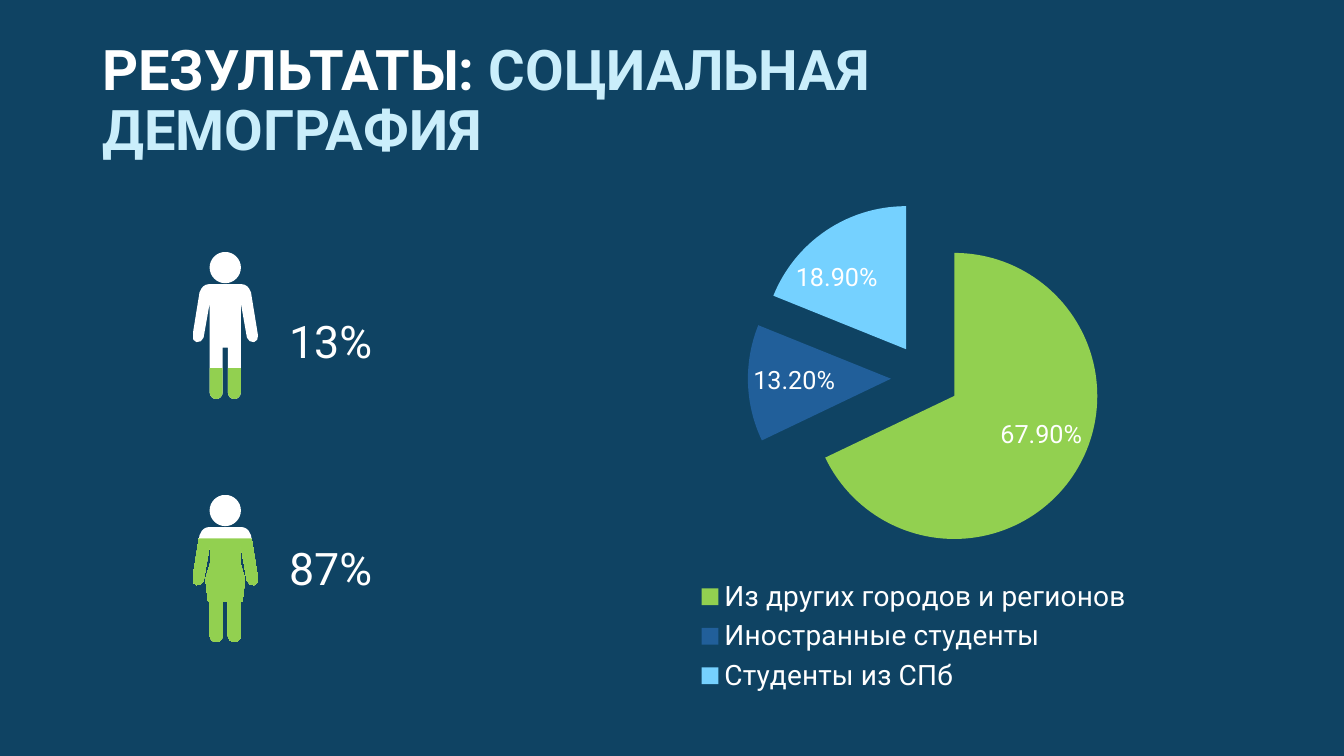
"""Build the slide on the social demography of the respondents."""
import dataclasses

import lxml.etree
import pptx
import pptx.chart.data
import pptx.dml.color
import pptx.enum.chart
import pptx.enum.text
import pptx.oxml.ns
import pptx.util


@dataclasses.dataclass(frozen=True)
class Theme:
    font: str = "Roboto"
    background: str = "0F4363"
    white: str = "FFFFFF"
    black: str = "000000"
    accent: str = "CAEEFB"
    green: str = "92D050"
    blue: str = "215F9A"
    sky: str = "75D1FF"
    title_size: int = 40
    figure_size: int = 32
    legend_size: int = 20
    label_size: int = 18
    chart_size: int = 10


UNIT = 0.72
ARM = [
    [(16.5, 32)],
    [(20, 32), (23.5, 35), (24.5, 38)],
    [(25.5, 40)],
    [(32.5, 83)],
    [(32.5, 86), (31.5, 89), (28.5, 89.5)],
    [(25.5, 90), (22.5, 88), (21.5, 85)],
    [(15.5, 51)],
]
FOOT = [
    [(15.5, 139)],
    [(15.5, 143), (12.5, 146), (9, 146)],
    [(5.5, 146), (2.5, 143), (2.5, 139)],
]
MAN = ARM + FOOT + [[(2.5, 95)]]
DRESS = [[(15, 51)], [(15, 68)], [(19.5, 83)], [(19, 90), (18, 98), (17, 106)], [(15.5, 106)]]
WOMAN = ARM + DRESS + FOOT + [[(2.5, 106)]]
HEAD = [
    [(0, 0)],
    [(8.5, 0), (15.5, 7), (15.5, 15.5)],
    [(15.5, 24), (8.5, 31), (0, 31)],
]


def mirror(half):
    """Return the points of a symmetric outline and the point count of each segment."""
    points = [point for segment in half for point in segment]
    sizes = [len(segment) for segment in half[1:]]
    reflected = [(-x, y) for x, y in reversed(points)]
    if reflected[0] == points[-1]:
        return points + reflected[1:], sizes + sizes[::-1]
    return points + reflected, sizes + [1] + sizes[::-1]


class SlideBuilder:
    """Hold the theme and the current slide."""

    def __init__(self, presentation, theme):
        self.theme = theme
        self.slide = presentation.slides.add_slide(presentation.slide_layouts[5])
        fill = self.slide.background.fill
        fill.solid()
        fill.fore_color.rgb = self.color(theme.background)

    def color(self, value):
        """Return a colour object for a hexadecimal value."""
        return pptx.dml.color.RGBColor.from_string(value)

    def style(self, font, size, color, bold=False):
        """Format a font."""
        font.name = self.theme.font
        font.size = pptx.util.Pt(size)
        font.bold = bold
        font.color.rgb = self.color(color)

    def title(self, left, top, width, height, runs):
        """Place the title and fill it with coloured runs."""
        shape = self.slide.shapes.title
        shape.left, shape.top = pptx.util.Pt(left), pptx.util.Pt(top)
        shape.width, shape.height = pptx.util.Pt(width), pptx.util.Pt(height)
        frame = shape.text_frame
        frame.word_wrap = True
        frame.auto_size = pptx.enum.text.MSO_AUTO_SIZE.NONE
        frame.vertical_anchor = pptx.enum.text.MSO_ANCHOR.MIDDLE
        paragraph = frame.paragraphs[0]
        paragraph.alignment = pptx.enum.text.PP_ALIGN.LEFT
        paragraph.line_spacing = 0.9
        for text, color in runs:
            run = paragraph.add_run()
            run.text = text
            self.style(run.font, self.theme.title_size, color, bold=True)

    def text(self, left, top, width, height, content):
        """Add a text box with one run."""
        shape = self.slide.shapes.add_textbox(*map(pptx.util.Pt, (left, top, width, height)))
        frame = shape.text_frame
        frame.word_wrap = True
        frame.auto_size = pptx.enum.text.MSO_AUTO_SIZE.SHAPE_TO_FIT_TEXT
        run = frame.paragraphs[0].add_run()
        run.text = content
        self.style(run.font, self.theme.figure_size, self.theme.white)

    def bend(self, shape, sizes):
        """Turn each group of three line segments into one curve."""
        lines = iter(list(shape._element.iter(pptx.oxml.ns.qn("a:lnTo"))))
        for size in sizes:
            group = [next(lines) for _ in range(size)]
            if size == 3:
                curve = lxml.etree.Element(pptx.oxml.ns.qn("a:cubicBezTo"))
                group[0].addprevious(curve)
                for line in group:
                    curve.append(line[0])
                    line.getparent().remove(line)

    def person(self, center, top, half_outline, stops):
        """Draw a symmetric person filled with two bands of colour."""
        (body, body_sizes), (head, head_sizes) = mirror(half_outline), mirror(HEAD)
        body, head = (
            [(pptx.util.Pt(center + x * UNIT), pptx.util.Pt(top + y * UNIT)) for x, y in contour]
            for contour in (body, head)
        )
        builder = self.slide.shapes.build_freeform(*body[0], scale=1.0)
        builder.add_line_segments(body[1:], close=True)
        builder.move_to(*head[0])
        builder.add_line_segments(head[1:], close=True)
        shape = builder.convert_to_shape()
        self.bend(shape, body_sizes + head_sizes)
        shape.shadow.inherit = False
        shape.line.fill.background()
        shape.fill.gradient()
        shape.fill.gradient_angle = 270
        colors = (self.theme.white, self.theme.green)
        for stop, position, color in zip(shape.fill.gradient_stops, stops, colors):
            stop.position = position
            stop.color.rgb = self.color(color)

    def layout(self, parent, index, box, size, inner=False):
        """Give a chart part a fixed place inside a chart of the given size."""
        name = pptx.oxml.ns.qn
        for old in parent.findall(name("c:layout")):
            parent.remove(old)
        layout = lxml.etree.Element(name("c:layout"))
        parent.insert(index, layout)
        manual = lxml.etree.SubElement(layout, name("c:manualLayout"))
        values = [("layoutTarget", "inner")] if inner else []
        fractions = [length / whole for length, whole in zip(box, size * 2)]
        values += [("xMode", "edge"), ("yMode", "edge"), *zip("xywh", fractions)]
        for tag, value in values:
            lxml.etree.SubElement(manual, name(f"c:{tag}")).set("val", str(value))

    def pie(self, left, top, width, height, slices, explosion, plot_box, legend_box):
        """Add an exploded pie chart with a legend below it."""
        data = pptx.chart.data.CategoryChartData(number_format="0.00%")
        data.categories = [category for category, _, _ in slices]
        data.add_series("Series 1", [value for _, value, _ in slices])
        chart = self.slide.shapes.add_chart(
            pptx.enum.chart.XL_CHART_TYPE.PIE, *map(pptx.util.Pt, (left, top, width, height)), data
        ).chart
        chart.has_title = False
        self.style(chart.font, self.theme.chart_size, self.theme.black)
        plot = chart.plots[0]
        plot.vary_by_categories = True
        series = plot.series[0]
        element = lxml.etree.Element(pptx.oxml.ns.qn("c:explosion"))
        element.set("val", str(explosion))
        series._element.find(pptx.oxml.ns.qn("c:tx")).addnext(element)
        for index, (_, _, color) in enumerate(slices):
            point = series.points[index].format
            point.fill.solid()
            point.fill.fore_color.rgb = self.color(color)
            point.line.fill.background()
        labels = series.data_labels
        labels.show_value = True
        labels.number_format = "0.00%"
        labels.number_format_is_linked = False
        labels.position = pptx.enum.chart.XL_LABEL_POSITION.BEST_FIT
        self.style(labels.font, self.theme.label_size, self.theme.white)
        chart.has_legend = True
        chart.legend.position = pptx.enum.chart.XL_LEGEND_POSITION.BOTTOM
        chart.legend.include_in_layout = False
        self.style(chart.legend.font, self.theme.legend_size, self.theme.white)
        self.layout(chart._chartSpace.chart.plotArea, 0, plot_box, (width, height), inner=True)
        self.layout(chart.legend._element, 1, legend_box, (width, height))


def main():
    """Build and save the presentation."""
    theme = Theme()
    presentation = pptx.Presentation()
    presentation.slide_width, presentation.slide_height = pptx.util.Pt(960), pptx.util.Pt(540)
    builder = SlideBuilder(presentation, theme)
    builder.title(66, 21, 828, 104.4, [("РЕЗУЛЬТАТЫ: ", theme.white), ("СОЦИАЛЬНАЯ ДЕМОГРАФИЯ", theme.accent)])
    builder.person(160.9, 180, MAN, (0.79, 0.79))
    builder.person(160.9, 353.5, WOMAN, (0.29, 0.3))
    builder.text(199.4, 383, 90, 46, "87%")
    builder.text(199.4, 220.3, 86, 46, "13%")
    slices = [
        ("Из других городов и регионов", 0.679, theme.green),
        ("Иностранные студенты", 0.132, theme.blue),
        ("Студенты из СПб", 0.189, theme.sky),
    ]
    builder.pie(359.3, 110.9, 587.5, 388, slices, 24, (36.4, 32.2, 530.5, 253.4), (135, 299.3, 317, 89))
    presentation.save("out.pptx")


if __name__ == "__main__":
    main()
